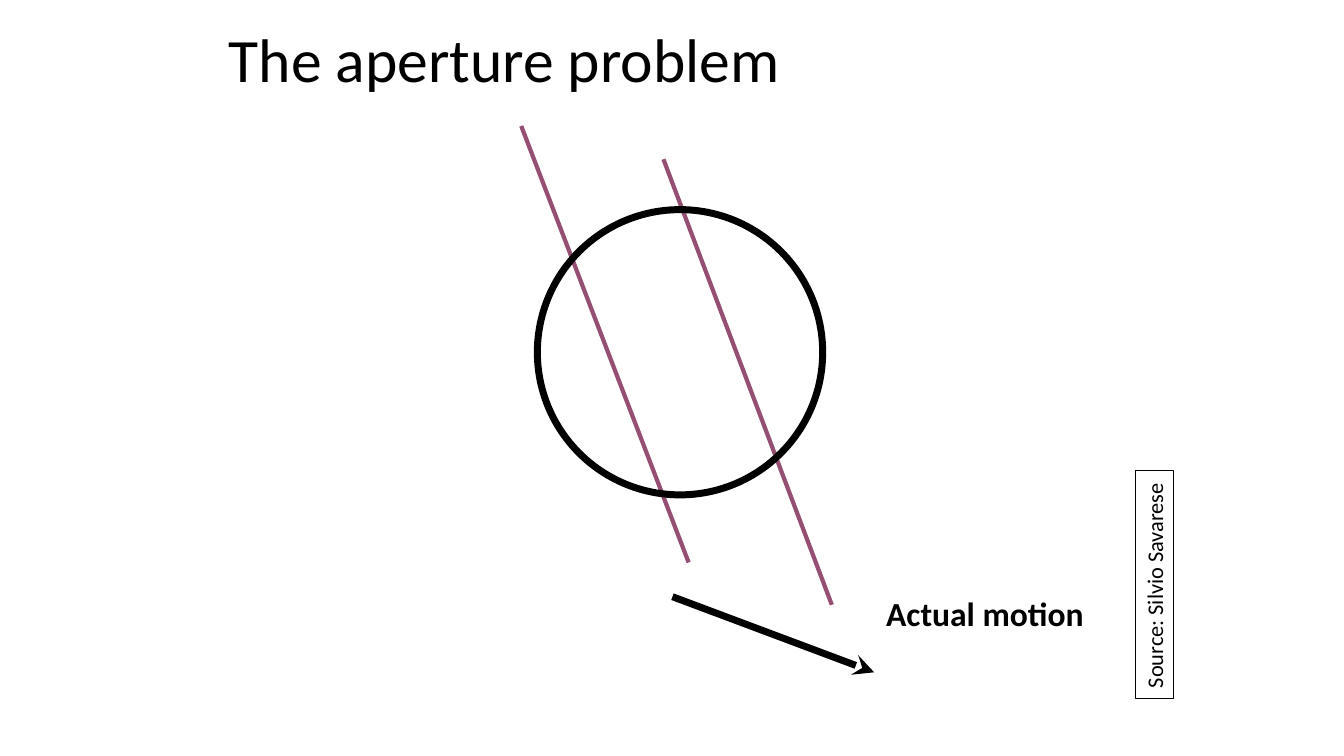
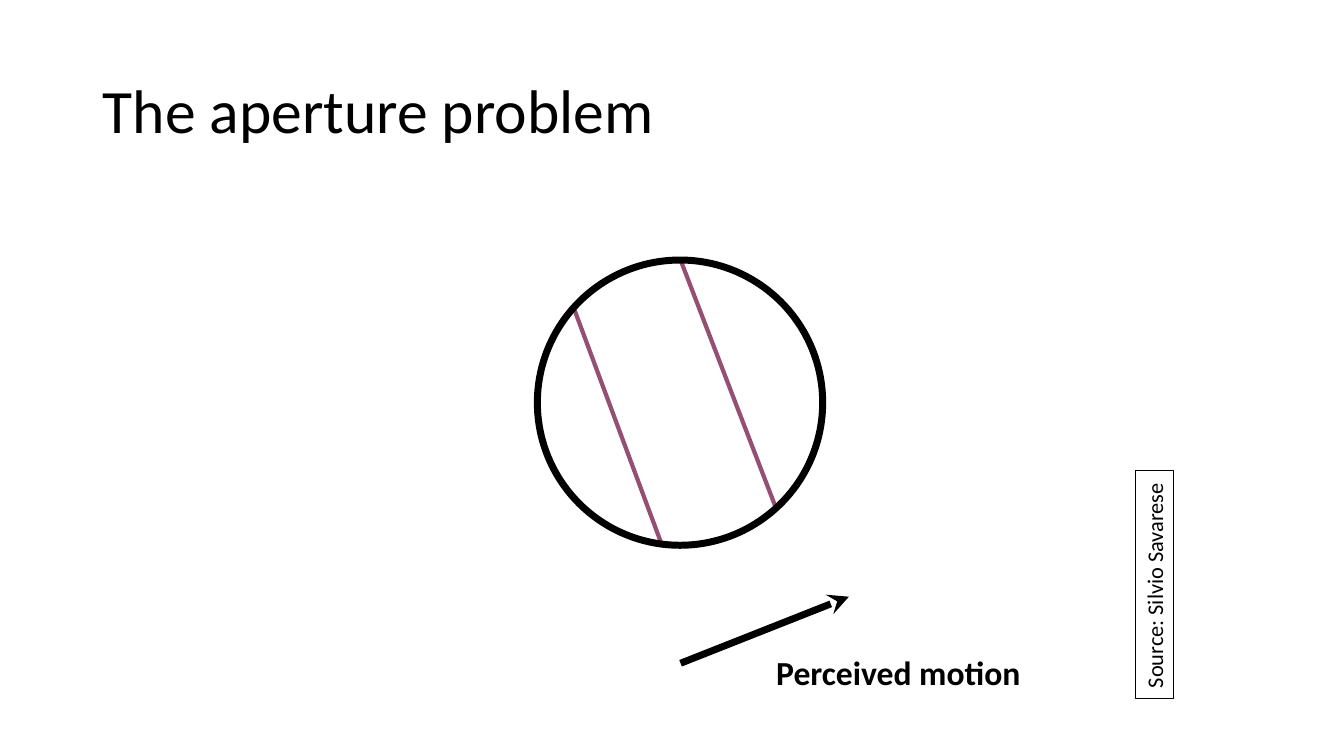
from dataclasses import dataclass

from lxml.etree import SubElement
from pptx import Presentation
from pptx.dml.color import RGBColor
from pptx.enum.shapes import MSO_CONNECTOR, MSO_SHAPE
from pptx.enum.text import MSO_ANCHOR, MSO_AUTO_SIZE, PP_ALIGN
from pptx.oxml.ns import qn
from pptx.shapes.base import BaseShape
from pptx.shapes.connector import Connector
from pptx.slide import Slide
from pptx.util import Inches, Pt

BLACK = RGBColor(0x00, 0x00, 0x00)
PLUM = RGBColor(0x95, 0x4F, 0x72)
FONT = "Calibri"
TITLE_ONLY_LAYOUT = 5

Box = tuple[float, float, float, float]
Segment = tuple[float, float, float, float]


@dataclass(frozen=True)
class MotionSlide:
    """Boxes are left, top, width, height; segments run from x, y to x, y."""

    title_box: Box
    stripes: tuple[Segment, ...]
    aperture_top: float
    arrow: Segment
    label: str
    label_box: Box


TITLE = "The aperture problem"
SOURCE = "Source: Silvio Savarese"
SOURCE_BOX: Box = (10.32, 5.61, 2.26, 0.37)
APERTURE_LEFT = 5.33
APERTURE_SIZE = 2.83

MOTION_SLIDES = (
    MotionSlide(
        title_box=(2.17, 0, 9, 1.25),
        stripes=((5.17, 1.25, 6.83, 5.58), (6.58, 1.58, 8.25, 6)),
        aperture_top=2.08,
        arrow=(6.67, 5.92, 8.67, 6.67),
        label="Actual motion",
        label_box=(8.69, 5.83, 2.18, 0.5),
    ),
    MotionSlide(
        title_box=(0.92, 0.4, 11.5, 1.45),
        stripes=((5.7, 3.08, 6.57, 5.42), (6.75, 2.58, 7.7, 5.05)),
        aperture_top=2.58,
        arrow=(6.75, 6.58, 8.42, 5.92),
        label="Perceived motion",
        label_box=(7.6, 6.42, 2.65, 0.5),
    ),
)


def write_text(shape: BaseShape, text: str, size: int, bold: bool = False) -> None:
    frame = shape.text_frame
    frame.text = text
    frame.word_wrap = False
    paragraph = frame.paragraphs[0]
    paragraph.alignment = PP_ALIGN.LEFT
    font = paragraph.font
    font.name, font.size, font.bold = FONT, Pt(size), bold
    font.color.rgb = BLACK


def add_title(slide: Slide, box: Box) -> None:
    title = slide.shapes.title
    title.left, title.top, title.width, title.height = map(Inches, box)
    write_text(title, TITLE, 44)
    frame = title.text_frame
    frame.word_wrap = True
    frame.auto_size = MSO_AUTO_SIZE.NONE
    frame.vertical_anchor = MSO_ANCHOR.MIDDLE
    frame.paragraphs[0].line_spacing = 0.9


def add_line(slide: Slide, segment: Segment, color: RGBColor, width: float) -> Connector:
    connector = slide.shapes.add_connector(
        MSO_CONNECTOR.STRAIGHT, *map(Inches, segment))
    connector.line.color.rgb = color
    connector.line.width = Pt(width)
    SubElement(connector._element.spPr, qn("a:effectLst"))
    return connector


def add_arrow(slide: Slide, segment: Segment) -> None:
    connector = add_line(slide, segment, BLACK, 5)
    SubElement(connector.line._get_or_add_ln(), qn("a:tailEnd"), type="stealth")


def add_outline(slide: Slide, kind: MSO_SHAPE, box: Box, width: float) -> BaseShape:
    """Add an unfilled preset shape with a black outline."""
    shape = slide.shapes.add_shape(kind, *map(Inches, box))
    shape.shadow.inherit = False
    shape.fill.background()
    shape.line.color.rgb = BLACK
    shape.line.width = Pt(width)
    return shape


def add_label(slide: Slide, text: str, box: Box) -> None:
    label = slide.shapes.add_textbox(*map(Inches, box))
    write_text(label, text, 24, bold=True)
    label.text_frame.auto_size = MSO_AUTO_SIZE.SHAPE_TO_FIT_TEXT


def add_source(slide: Slide) -> None:
    source = add_outline(slide, MSO_SHAPE.RECTANGLE, SOURCE_BOX, 0.75)
    source.rotation = 270
    write_text(source, SOURCE, 16)
    source.text_frame.vertical_anchor = MSO_ANCHOR.TOP
    source.text_frame.auto_size = MSO_AUTO_SIZE.SHAPE_TO_FIT_TEXT


def add_motion_slide(presentation: Presentation, content: MotionSlide) -> None:
    slide = presentation.slides.add_slide(
        presentation.slide_layouts[TITLE_ONLY_LAYOUT])
    add_title(slide, content.title_box)
    for stripe in content.stripes:
        add_line(slide, stripe, PLUM, 3)
    aperture_box = (APERTURE_LEFT, content.aperture_top, APERTURE_SIZE, APERTURE_SIZE)
    add_outline(slide, MSO_SHAPE.OVAL, aperture_box, 5)
    add_arrow(slide, content.arrow)
    add_label(slide, content.label, content.label_box)
    add_source(slide)


def main() -> None:
    presentation = Presentation()
    presentation.slide_width = Inches(13.33)
    presentation.slide_height = Inches(7.5)
    for content in MOTION_SLIDES:
        add_motion_slide(presentation, content)
    presentation.save("out.pptx")


if __name__ == "__main__":
    main()
